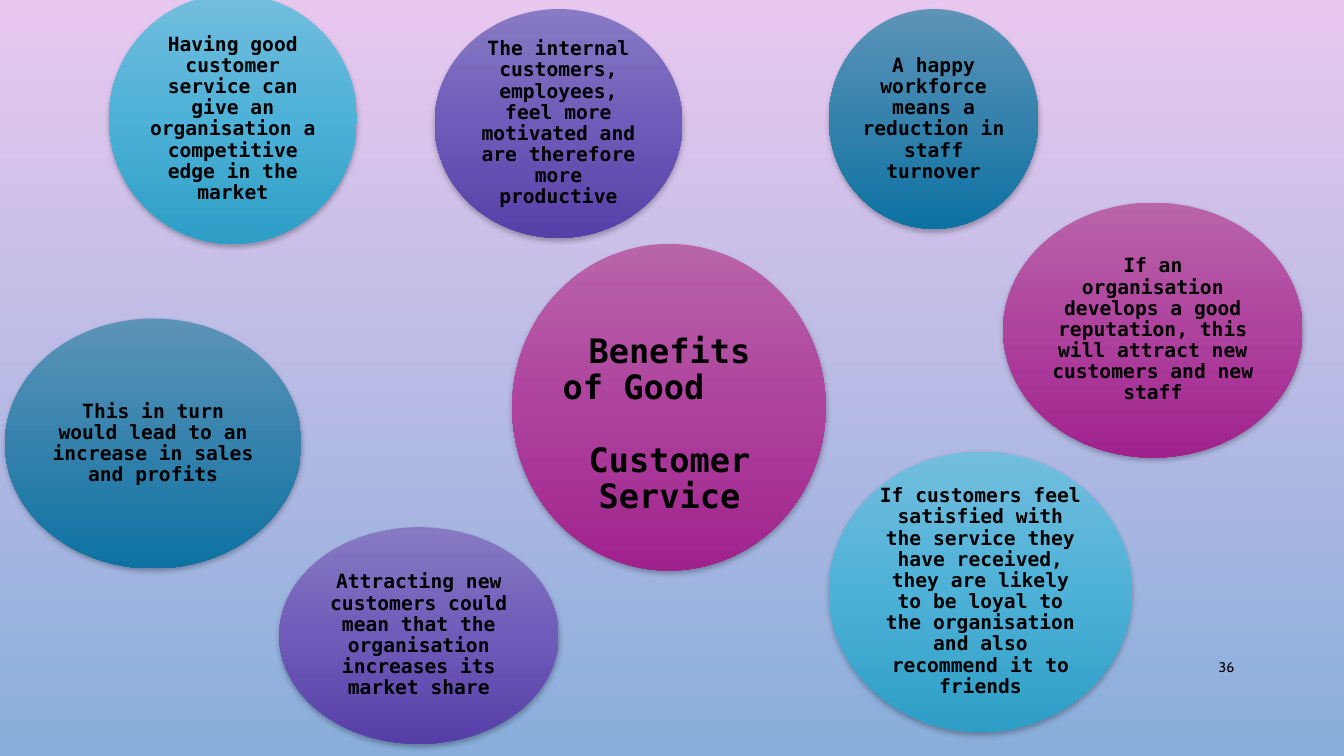
import copy

import pptx
import pptx.dml.color
import pptx.enum.shapes
import pptx.enum.text
import pptx.oxml
import pptx.oxml.ns
import pptx.util
from pptx.util import Inches

ALIGN = pptx.enum.text.PP_ALIGN
BODY_FONT = "DejaVu Sans Mono"
BLACK = "000000"
BACKDROP = ["E9C8EF", "89AEDB"]
MAGENTA = ["B965AA", "AE429D", "A0228D"]
VIOLET = ["887AC4", "6F5BB9", "563FA7"]
TEAL = ["5D94B8", "3582AD", "0D72A1"]
SKY = ["73BEDE", "4EB1D7", "2D9EC6"]

BENEFITS = [
    ((4.31, 0.09, 2.46, 2.27), VIOLET,
     "The internal customers, employees, feel more motivated and are therefore more productive"),
    ((8.22, 0.09, 2.08, 2.18), TEAL,
     "A happy workforce means a reduction in staff turnover"),
    ((8.22, 4.48, 3.01, 2.78), SKY,
     "If customers feel satisfied with the service they have received, they are likely "
     "to be loyal to the organisation and also recommend it to friends"),
    ((9.95, 2.01, 2.97, 2.53), MAGENTA,
     "If an organisation develops a good reputation, this will attract new customers and new staff"),
    ((2.77, 5.23, 2.77, 2.15), VIOLET,
     "Attracting new customers could mean that the organisation increases its market share"),
    ((0.05, 3.16, 2.94, 2.48), TEAL,
     "This in turn would lead to an increase in sales and profits"),
    ((1.08, -0.06, 2.46, 2.48), SKY,
     "Having good customer service can give an organisation a competitive edge in the market"),
]


def rgb(colour):
    """Turn a hex string into a colour."""
    return pptx.dml.color.RGBColor.from_string(colour)


def paint_gradient(fill, owner, colours):
    """Fill from top to bottom with evenly spaced colours."""
    fill.gradient()
    fill.gradient_angle = 270
    stop_list = owner.xpath(".//a:gsLst")[0]
    for _ in colours[2:]:
        stop_list.append(copy.deepcopy(stop_list[0]))
    for index, (stop, colour) in enumerate(zip(fill.gradient_stops, colours)):
        stop.color.rgb = rgb(colour)
        stop.position = index / (len(colours) - 1)


def add_soft_shadow(bubble):
    """Give a bubble a faint shadow below it."""
    bubble.shadow.inherit = False
    effects = bubble.element.spPr.find(pptx.oxml.ns.qn("a:effectLst"))
    effects.append(pptx.oxml.parse_xml(
        f'<a:outerShdw {pptx.oxml.ns.nsdecls("a")} blurRad="50800" dist="25400" '
        'dir="5400000" rotWithShape="0"><a:srgbClr val="000000">'
        '<a:alpha val="28000"/></a:srgbClr></a:outerShdw>'))


def prepare_frame(frame, inset):
    """Set wrapping, middle anchoring and equal margins."""
    frame.word_wrap = True
    frame.auto_size = pptx.enum.text.MSO_AUTO_SIZE.NONE
    frame.vertical_anchor = pptx.enum.text.MSO_ANCHOR.MIDDLE
    frame.margin_left = frame.margin_right = Inches(inset)
    frame.margin_top = frame.margin_bottom = Inches(inset)


def write(paragraph, text, size, align=ALIGN.CENTER, font=BODY_FONT, bold=True):
    """Write one formatted run into a paragraph."""
    paragraph.alignment = align
    paragraph.line_spacing = 0.9
    run = paragraph.add_run()
    run.text = text
    run.font.name = font
    run.font.size = pptx.util.Pt(size)
    run.font.bold = bold
    run.font.color.rgb = rgb(BLACK)


def add_bubble(slide, place, colours, text=""):
    """Add a gradient ellipse, with its text if there is any."""
    bubble = slide.shapes.add_shape(
        pptx.enum.shapes.MSO_SHAPE.OVAL, *map(Inches, place))
    paint_gradient(bubble.fill, bubble.element, colours)
    bubble.line.fill.background()
    add_soft_shadow(bubble)
    if text:
        prepare_frame(bubble.text_frame, 0.02)
        write(bubble.text_frame.paragraphs[0], text, 14)


def set_title(slide):
    """Lay the slide title over the central bubble."""
    title = slide.shapes.title
    title.left, title.top, title.width, title.height = map(
        Inches, (5.54, 3.25, 2.2, 1.93))
    title.element.getparent().append(title.element)
    frame = title.text_frame
    prepare_frame(frame, 0.04)
    write(frame.paragraphs[0], "Benefits", 24)
    second_line = frame.add_paragraph()
    second_line.paragraph_format = None
    second_line.element_margin = None
    write(second_line, "of Good", 24, ALIGN.LEFT)
    subject = frame.add_paragraph()
    subject.space_before = pptx.util.Pt(26)
    write(subject, "Customer Service", 24)


def add_page_number(slide, number):
    """Add the page number at the lower right."""
    box = slide.shapes.add_textbox(*map(Inches, (11.5, 6.43, 0.84, 0.4)))
    prepare_frame(box.text_frame, 0.1)
    write(box.text_frame.paragraphs[0], number, 10, ALIGN.RIGHT, "Cabin", False)


def main():
    """Build and save the slide."""
    deck = pptx.Presentation()
    deck.slide_width, deck.slide_height = Inches(13.33), Inches(7.5)
    slide = deck.slides.add_slide(deck.slide_layouts[5])
    paint_gradient(slide.background.fill, slide.element, BACKDROP)
    add_page_number(slide, "36")
    add_bubble(slide, (5.08, 2.42, 3.11, 3.24), MAGENTA)
    set_title(slide)
    for place, colours, text in BENEFITS:
        add_bubble(slide, place, colours, text)
    deck.save("out.pptx")


if __name__ == "__main__":
    main()
